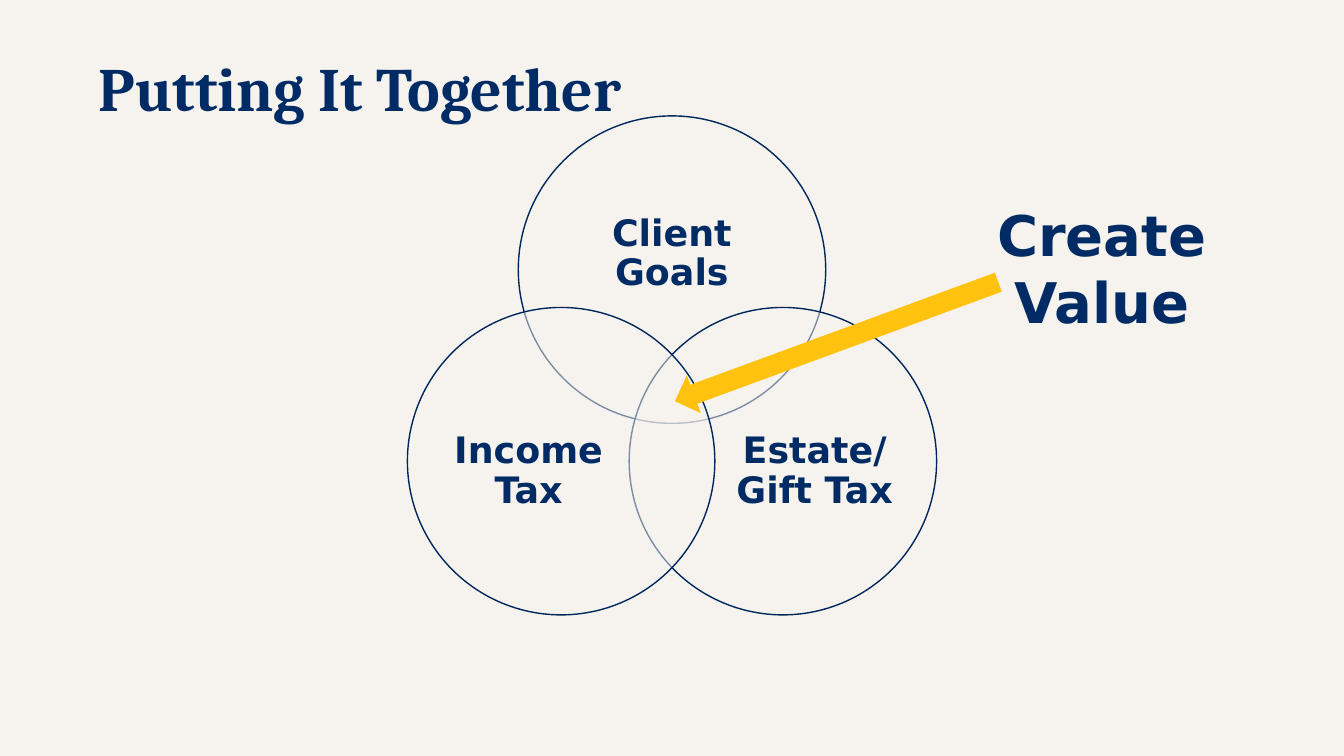
from lxml import etree
from pptx import Presentation
from pptx.dml.color import RGBColor
from pptx.enum.shapes import MSO_SHAPE
from pptx.enum.text import MSO_ANCHOR, PP_ALIGN
from pptx.oxml.ns import qn
from pptx.util import Pt

CREAM, NAVY, OUTLINE, GOLD = "F6F3EF", "002B64", "00275B", "FFC20E"


def rgb(value):
    return RGBColor.from_string(value)


class Deck:
    heading_font = "Cambria"
    body_font = "DejaVu Sans"

    def __init__(self, prs):
        self.s = prs.slides.add_slide(prs.slide_layouts[6])
        self.s.background.fill.solid()
        self.s.background.fill.fore_color.rgb = rgb(CREAM)

    def shape(self, kind, x, y, w, h, fill):
        sp = self.s.shapes.add_shape(kind, Pt(x), Pt(y), Pt(w), Pt(h))
        sp.shadow.inherit = False
        sp.fill.solid()
        sp.fill.fore_color.rgb = rgb(fill)
        sp.line.fill.background()
        return sp

    def circle(self, cx, cy, diameter):
        """Half-transparent outlined circle around a centre point."""
        sp = self.shape(MSO_SHAPE.OVAL, cx - diameter / 2, cy - diameter / 2,
                        diameter, diameter, CREAM)
        sp.line.color.rgb = rgb(OUTLINE)
        sp.line.width = Pt(1)
        color = sp.fill._xPr.find(qn("a:solidFill"))[0]
        etree.SubElement(color, qn("a:alpha"), val="50000")

    def arrow(self, x, y, w, h, rotation):
        sp = self.shape(MSO_SHAPE.DOWN_ARROW, x, y, w, h, GOLD)
        sp.rotation = rotation

    def text(self, text, x, y, w, h, size, font=body_font, align=PP_ALIGN.CENTER,
             anchor=MSO_ANCHOR.MIDDLE, spacing=0.9, inset=True):
        tf = self.s.shapes.add_textbox(Pt(x), Pt(y), Pt(w), Pt(h)).text_frame
        tf.word_wrap = True
        tf.vertical_anchor = anchor
        if not inset:
            tf.margin_left = tf.margin_right = tf.margin_top = tf.margin_bottom = 0
        p = tf.paragraphs[0]
        p.text = text
        p.alignment = align
        p.line_spacing = spacing
        p.font.name = font
        p.font.size = Pt(size)
        p.font.bold = True
        p.font.color.rgb = rgb(NAVY)


def main():
    prs = Presentation()
    prs.slide_width, prs.slide_height = Pt(960), Pt(540)
    deck = Deck(prs)

    # Circle centre, then label centre and width
    venn = [
        ("Client Goals", 480, 192.6, 480, 181.5, 161),
        ("Estate/\vGift Tax", 559.2, 329.4, 582, 337, 132),
        ("Income Tax", 400.8, 329.4, 377.6, 337, 132),
    ]
    label_height = 100
    for label, cx, cy, label_x, label_y, width in venn:
        deck.circle(cx, cy, 219.6)
        deck.text(label, label_x - width / 2, label_y - label_height / 2,
                  width, label_height, 26, inset=False)

    deck.text("Create Value", 699.8, 139.7, 174.2, 104.4, 40,
              anchor=MSO_ANCHOR.TOP, spacing=1.0)
    deck.arrow(583.2, 121, 28.8, 246.2, 69.8)
    deck.text("Putting It Together", 63.4, 13, 828, 104.4, 44,
              font=deck.heading_font, align=PP_ALIGN.LEFT)
    prs.save("out.pptx")


if __name__ == "__main__":
    main()
